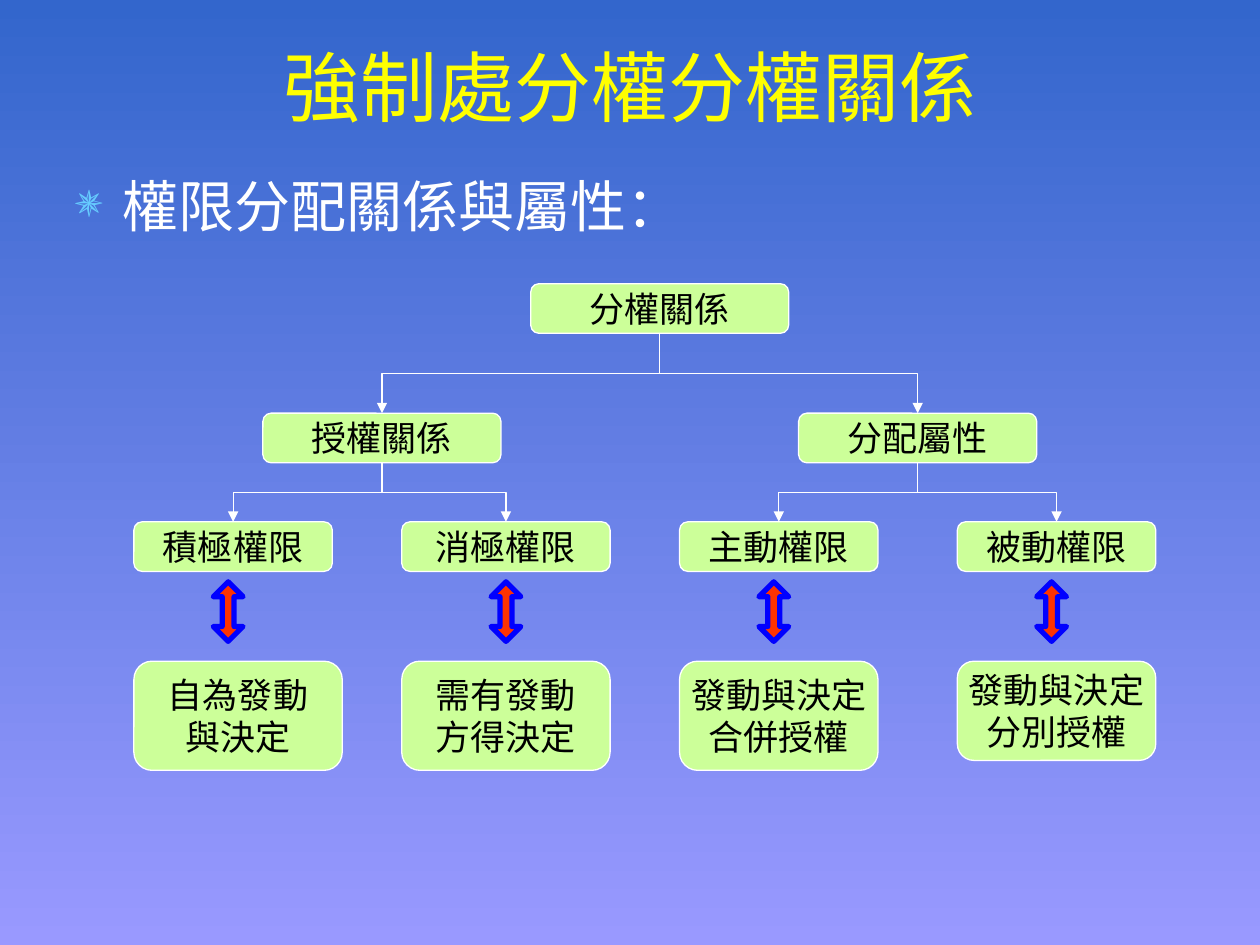
from typing import NamedTuple

from lxml.etree import SubElement
from pptx import Presentation
from pptx.dml.color import RGBColor
from pptx.enum.shapes import MSO_CONNECTOR as Connector
from pptx.enum.shapes import MSO_SHAPE as Shape
from pptx.enum.text import MSO_ANCHOR as Anchor
from pptx.enum.text import PP_ALIGN as Align
from pptx.oxml.ns import qn
from pptx.util import Cm, Pt

SKY_TOP = RGBColor(0x33, 0x66, 0xCC)
SKY_BOTTOM = RGBColor(0x99, 0x99, 0xFF)
YELLOW = RGBColor(0xFF, 0xFF, 0x00)
WHITE = RGBColor(0xFF, 0xFF, 0xFF)
BLACK = RGBColor(0x00, 0x00, 0x00)
GREEN = RGBColor(0xCC, 0xFF, 0x99)
RED = RGBColor(0xFF, 0x33, 0x00)
BLUE = RGBColor(0x00, 0x00, 0xFF)
BULLET_COLOR = "66CCFF"

# Lengths in centimetres
ROOT_TOP, GROUP_TOP, RIGHT_TOP, ARROW_TOP, RULE_TOP = 5.72, 8.33, 10.52, 11.73, 13.33
BOX_HEIGHT = 1
ARROW_WIDTH, ARROW_HEIGHT = 0.6, 1.2

TITLE_FORMAT = {"size": Pt(44), "name": "Arial"}
BODY_FORMAT = {"size": Pt(32), "name": "Arial"}
BOX_FORMAT = {"size": Pt(20), "name": "Roboto"}


class Box(NamedTuple):
    text: str
    left: float
    top: float
    width: float
    height: float = BOX_HEIGHT


class Branch(NamedTuple):
    right: Box
    rule: Box
    arrow_left: float


class Group(NamedTuple):
    box: Box
    branches: tuple[Branch, ...]


ROOT = Box("分權關係", 10.7, ROOT_TOP, 5.2)
GROUPS = (
    Group(Box("授權關係", 5.3, GROUP_TOP, 4.8), (
        Branch(Box("積極權限", 2.7, RIGHT_TOP, 4),
               Box("自為發動\n與決定", 2.7, RULE_TOP, 4.2, 2.2), 4.3),
        Branch(Box("消極權限", 8.1, RIGHT_TOP, 4.2),
               Box("需有發動\n方得決定", 8.1, RULE_TOP, 4.2, 2.2), 9.9),
    )),
    Group(Box("分配屬性", 16.1, GROUP_TOP, 4.8), (
        Branch(Box("主動權限", 13.7, RIGHT_TOP, 4),
               Box("發動與決定\n合併授權", 13.7, RULE_TOP, 4, 2.2), 15.3),
        Branch(Box("被動權限", 19.3, RIGHT_TOP, 4),
               Box("發動與決定\n分別授權", 19.3, RULE_TOP, 4, 2), 20.9),
    )),
)


def write_text(frame, text: str, color: RGBColor, values: dict, align: Align) -> None:
    frame.text = text
    for paragraph in frame.paragraphs:
        paragraph.alignment = align
        paragraph.font.color.rgb = color
        for name, value in values.items():
            setattr(paragraph.font, name, value)


def add_filled(slide, kind: Shape, bounds: tuple, fill: RGBColor,
               line: RGBColor, line_width: float):
    shape = slide.shapes.add_shape(kind, *map(Cm, bounds))
    shape.shadow.inherit = False
    shape.fill.solid()
    shape.fill.fore_color.rgb = fill
    shape.line.color.rgb = line
    shape.line.width = Pt(line_width)
    return shape


def add_box(slide, box: Box):
    shape = add_filled(slide, Shape.FLOWCHART_ALTERNATE_PROCESS, box[1:], GREEN, WHITE, 0.75)
    shape.text_frame.word_wrap = False
    shape.text_frame.vertical_anchor = Anchor.MIDDLE
    write_text(shape.text_frame, box.text, BLACK, BOX_FORMAT, Align.CENTER)
    return shape


def add_branch_line(slide, parent, child) -> None:
    """Join a box to the one below by an elbow that leaves downwards."""
    start_x, start_y = parent.left + parent.width // 2, parent.top + parent.height
    end_x, end_y = child.left + child.width // 2, child.top
    drop, reach = end_y - start_y, abs(end_x - start_x)
    connector = slide.shapes.add_connector(Connector.ELBOW, start_x, start_y, end_x, end_y)
    connector.begin_connect(parent, 2)
    connector.end_connect(child, 0)

    # The elbow preset runs sideways, so its frame is turned a quarter
    connector.left = (start_x + end_x - drop) // 2
    connector.top = (start_y + end_y - reach) // 2
    connector.width, connector.height = drop, reach
    goes_right = end_x > start_x
    properties = connector._element.spPr
    frame = properties.find(qn("a:xfrm"))
    frame.set("rot", "16200000" if goes_right else "5400000")
    frame.set("flipH", "1" if goes_right else "0")
    frame.set("flipV", "0")

    connector.line.color.rgb = WHITE
    connector.line.width = Pt(0.75)
    SubElement(properties.find(qn("a:ln")), qn("a:tailEnd"), type="triangle")
    SubElement(properties, qn("a:effectLst"))


def add_text(slide, bounds: tuple, text: str, color: RGBColor, values: dict,
             align: Align, anchor: Anchor):
    frame = slide.shapes.add_textbox(*map(Cm, bounds)).text_frame
    frame.word_wrap = True
    frame.vertical_anchor = anchor
    write_text(frame, text, color, values, align)
    return frame.paragraphs[0]


def add_bullet(paragraph) -> None:
    properties = paragraph._p.get_or_add_pPr()
    properties.set("marL", str(Cm(0.95)))
    properties.set("indent", str(-Cm(0.95)))
    color = SubElement(properties, qn("a:buClr"))
    SubElement(color, qn("a:srgbClr"), val=BULLET_COLOR)
    SubElement(properties, qn("a:buSzPct"), val="85000")
    SubElement(properties, qn("a:buChar"), char="✵")
    # Default run properties come after the bullet
    properties.append(properties.find(qn("a:defRPr")))


def style_runs(paragraph, color: RGBColor, values: dict) -> None:
    for run in paragraph.runs:
        run.font.color.rgb = color
        for name, value in values.items():
            setattr(run.font, name, value)


def main() -> None:
    presentation = Presentation()
    presentation.slide_width, presentation.slide_height = Cm(25.4), Cm(19.05)
    slide = presentation.slides.add_slide(presentation.slide_layouts[6])

    # Background
    fill = slide.background.fill
    fill.gradient()
    fill.gradient_angle = 270
    for stop, color in zip(fill.gradient_stops, (SKY_TOP, SKY_BOTTOM)):
        stop.color.rgb = color

    # Title and heading
    title = add_text(slide, (0.84, 0.64, 23.72, 2.16), "強制處分權分權關係", YELLOW,
                     TITLE_FORMAT, Align.CENTER, Anchor.MIDDLE)
    style_runs(title, YELLOW, TITLE_FORMAT)
    heading = add_text(slide, (1.27, 3.33, 22.86, 13.72), "權限分配關係與屬性：", WHITE,
                       BODY_FORMAT, Align.LEFT, Anchor.TOP)
    style_runs(heading, WHITE, BODY_FORMAT)
    add_bullet(heading)

    # Tree of boxes, with a double arrow down to each rule
    root = add_box(slide, ROOT)
    for group in GROUPS:
        group_shape = add_box(slide, group.box)
        add_branch_line(slide, root, group_shape)
        for branch in group.branches:
            add_branch_line(slide, group_shape, add_box(slide, branch.right))
            add_box(slide, branch.rule)
            arrow = add_filled(slide, Shape.UP_DOWN_ARROW,
                               (branch.arrow_left, ARROW_TOP, ARROW_WIDTH, ARROW_HEIGHT),
                               RED, BLUE, 3)
            arrow.adjustments[0], arrow.adjustments[1] = 0.5, 0.4

    presentation.save("out.pptx")


if __name__ == "__main__":
    main()
